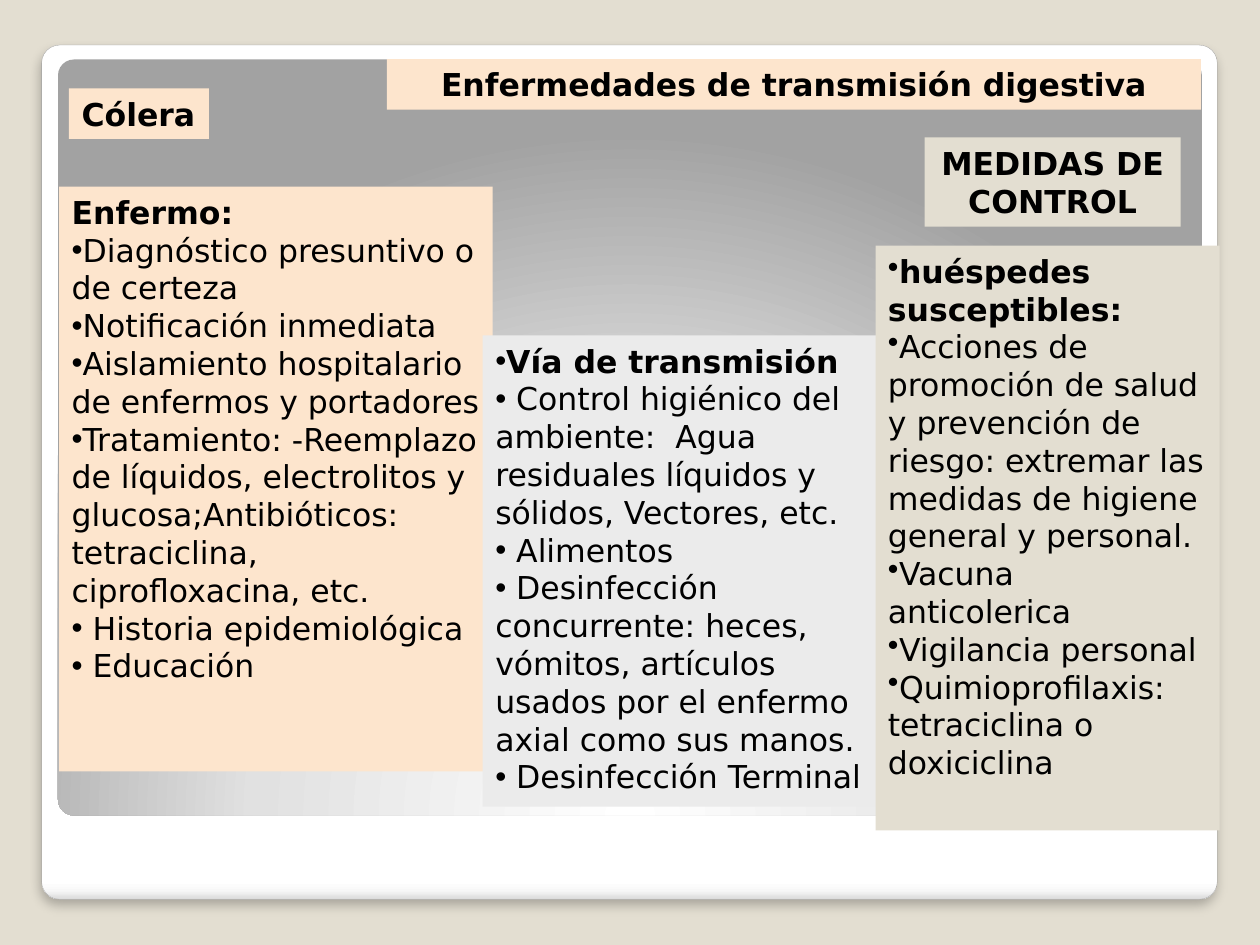
from lxml import etree
from pptx import Presentation
from pptx.dml.color import RGBColor
from pptx.enum.shapes import MSO_SHAPE
from pptx.enum.text import MSO_ANCHOR, MSO_AUTO_SIZE, PP_ALIGN
from pptx.oxml import parse_xml
from pptx.oxml.ns import qn
from pptx.util import Cm, Pt

ROUNDED = MSO_SHAPE.ROUNDED_RECTANGLE
TOP = MSO_ANCHOR.TOP
NO_FIT = MSO_AUTO_SIZE.NONE
LEFT, CENTER = PP_ALIGN.LEFT, PP_ALIGN.CENTER
NS = 'xmlns:a="http://schemas.openxmlformats.org/drawingml/2006/main"'
FONT = "DejaVu Sans"
COLORS = {"sand": "E3DED1", "peach": "FDE5CD", "gray": "EBEBEB",
          "edge": "A4A4A4", "text": "000000"}


def add_panel(s, box, stops, direction):
    sp = s.shapes.add_shape(ROUNDED, *[Cm(v) for v in box])
    sp.adjustments[0] = 0.021
    sp.shadow.inherit = False
    sp.line.fill.background()
    gs = "".join(f'<a:gs pos="{pos * 1000}"><a:srgbClr val="{c}"/></a:gs>'
                 for pos, c in stops)
    sp._element.spPr.find(qn("a:prstGeom")).addnext(parse_xml(
        f'<a:gradFill {NS} rotWithShape="1"><a:gsLst>{gs}</a:gsLst>{direction}</a:gradFill>'))
    return sp


def fill_box(sp, box, color, lines, align, bullets_from, bold_count, wrap):
    sp.left, sp.top, sp.width, sp.height = [Cm(v) for v in box]
    sp.fill.solid()
    sp.fill.fore_color.rgb = RGBColor.from_string(COLORS[color])
    tf = sp.text_frame
    tf.word_wrap = wrap
    tf.auto_size = NO_FIT
    tf.vertical_anchor = TOP
    tf.text = "\n".join(lines)
    for i, p in enumerate(tf.paragraphs):
        p.alignment = align
        p.space_before = Pt(0)
        p.font.name = FONT
        p.font.size = Pt(18)
        p.font.bold = i < bold_count
        p.font.color.rgb = RGBColor.from_string(COLORS["text"])
        pPr = p._p.get_or_add_pPr()
        pPr.set("marL", "0")
        pPr.set("indent", "0")
        if i >= bullets_from:
            bullet = etree.Element(qn("a:buChar"), char="•")
        else:
            bullet = etree.Element(qn("a:buNone"))
        pPr.find(qn("a:defRPr")).addprevious(bullet)


prs = Presentation()
prs.slide_width, prs.slide_height = Cm(25.4), Cm(19.05)
s = prs.slides.add_slide(prs.slide_layouts[4])
s.background.fill.solid()
s.background.fill.fore_color.rgb = RGBColor.from_string(COLORS["sand"])

frame = add_panel(s, (0.84, 0.91, 23.7, 17.22),
                  [(0, "FFFFFF"), (98, "FFFFFF"), (99, "F7F7F7"), (100, "DADADA")],
                  '<a:lin ang="5400000" scaled="0"/>')
frame.line.color.rgb = RGBColor.from_string(COLORS["edge"])
frame.line.width = Pt(0.16)
frame._element.spPr.find(qn("a:effectLst")).append(parse_xml(
    f'<a:outerShdw {NS} blurRad="76200" dist="50800" dir="5400000" algn="tl" rotWithShape="0">'
    '<a:srgbClr val="000000"><a:alpha val="25000"/></a:srgbClr></a:outerShdw>'))
add_panel(s, (1.17, 1.2, 23.06, 15.24),
          [(0, "FFFFFF"), (55, "E1E1E1"), (100, "A2A2A2")],
          '<a:path path="circle">'
          '<a:fillToRect l="50000" t="175000" r="50000" b="-75000"/></a:path>')

patient = [
    "Enfermo:",
    "Diagnóstico presuntivo o de certeza",
    "Notificación inmediata",
    "Aislamiento hospitalario de enfermos y portadores",
    "Tratamiento: -Reemplazo de líquidos, electrolitos y glucosa;"
    "Antibióticos: tetraciclina, ciprofloxacina, etc.",
    " Historia epidemiológica",
    " Educación",
]
route = [
    "Vía de transmisión",
    " Control higiénico del ambiente:  Agua residuales líquidos y sólidos, Vectores, etc.",
    " Alimentos",
    " Desinfección concurrente: heces, vómitos, artículos usados por el enfermo "
    "axial como sus manos.",
    " Desinfección Terminal",
]
hosts = [
    "huéspedes susceptibles:",
    "Acciones de promoción de salud y prevención de riesgo: extremar las medidas "
    "de higiene general y personal.",
    "Vacuna anticolerica",
    "Vigilancia personal",
    "Quimioprofilaxis: tetraciclina o doxiciclina",
]

title, disease, patient_list, measures, route_list = s.placeholders
hosts_list = s.shapes.add_textbox(0, 0, Cm(1), Cm(1))
boxes = [
    (patient_list, (1.19, 3.76, 8.74, 11.79), "peach", patient, LEFT, 1, 1, True),
    (disease, (1.39, 1.78, 2.82, 1.02), "peach", ["Cólera"], LEFT, 1, 1, False),
    (title, (7.8, 1.19, 16.41, 1.02), "peach",
     ["Enfermedades de transmisión digestiva"], CENTER, 1, 1, True),
    (measures, (18.64, 2.77, 5.16, 1.8), "sand", ["MEDIDAS DE CONTROL"], CENTER, 1, 1, True),
    (route_list, (9.73, 6.76, 7.95, 9.5), "gray", route, LEFT, 0, 1, True),
    (hosts_list, (17.65, 4.95, 6.94, 11.79), "sand", hosts, LEFT, 0, 1, True),
]
for sp, *settings in boxes:
    fill_box(sp, *settings)
    s.shapes._spTree.append(sp._element)

prs.save("out.pptx")
